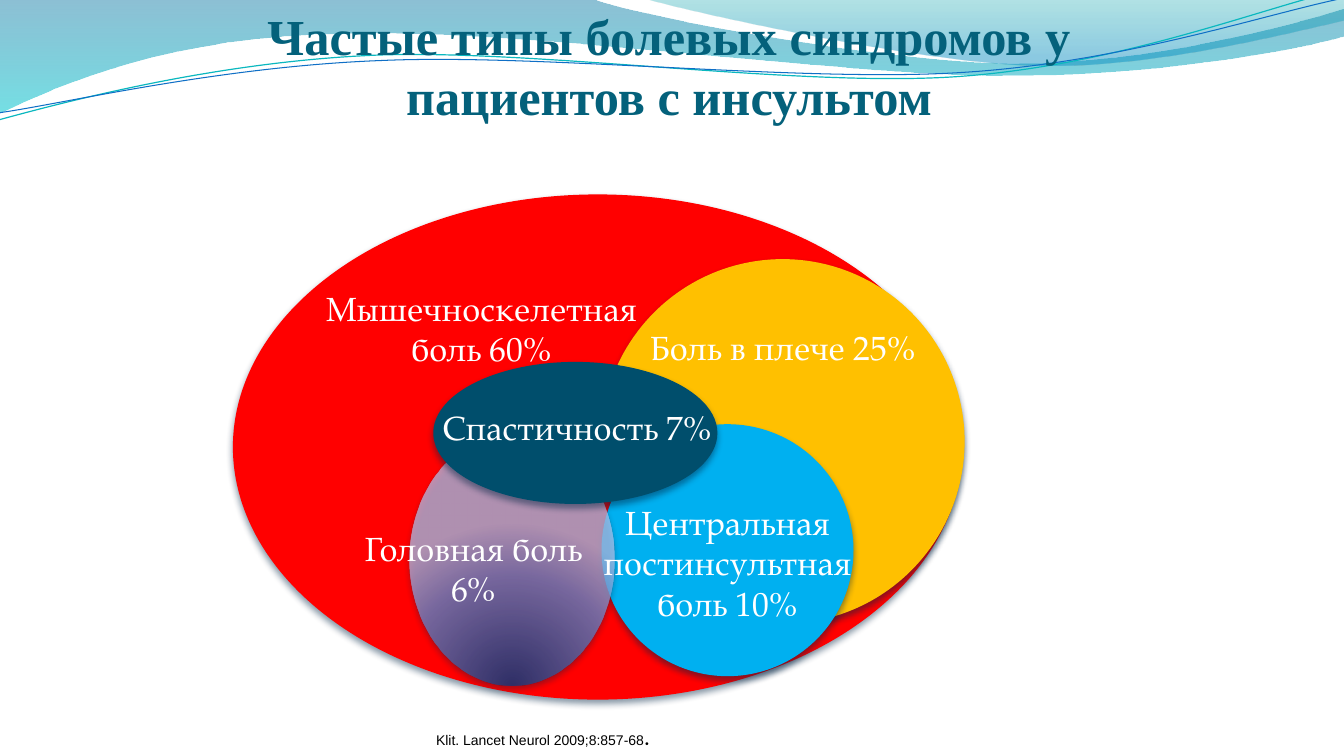
from lxml.etree import SubElement
from pptx import Presentation
from pptx.dml.color import RGBColor
from pptx.enum.shapes import MSO_SHAPE
from pptx.enum.text import MSO_ANCHOR, MSO_AUTO_SIZE, PP_ALIGN
from pptx.oxml import parse_xml
from pptx.oxml.ns import nsdecls, qn
from pptx.util import Cm, Pt

WHITE = RGBColor(0xFF, 0xFF, 0xFF)
BLACK = RGBColor(0x00, 0x00, 0x00)
TITLE_TEAL = RGBColor(0x04, 0x61, 0x7B)
CREST_CYAN = RGBColor(0x0A, 0xB8, 0xBF)
CREST_BLUE = RGBColor(0x0F, 0x6F, 0xC6)
RED = RGBColor(0xFF, 0x00, 0x00)
AMBER = RGBColor(0xFF, 0xC0, 0x00)
SKY = RGBColor(0x00, 0xB0, 0xF0)
PETROL = RGBColor(0x00, 0x4E, 0x6C)
SHADOW_NAVY = RGBColor(0x04, 0x25, 0x44)
NAVY = RGBColor(0x00, 0x3C, 0x85)
PERIWINKLE = RGBColor(0x66, 0x8C, 0xD3)
LAVENDER = RGBColor(0xB3, 0xC4, 0xED)
WAVE_BLUE = RGBColor(0x00, 0x74, 0xA1)
WAVE_CYAN = RGBColor(0x00, 0xC6, 0xCF)
WAVE_TEAL = RGBColor(0x00, 0xA1, 0xA9)
WAVE_AZURE = RGBColor(0x00, 0x8B, 0xBF)

LABEL_FONT = "TeX Gyre Pagella"
DOWNWARD = '<a:lin ang="5400000" scaled="0"/>'
FROM_BELOW = ('<a:path path="circle"><a:fillToRect l="50000" t="130000" '
              'r="50000" b="-30000"/></a:path>')


def fill_gradient(shape, stops, direction):
    shape.fill.background()
    stop_xml = "".join(
        f'<a:gs pos="{position * 1000}"><a:srgbClr val="{color}">'
        f'<a:alpha val="{alpha * 1000}"/></a:srgbClr></a:gs>'
        for position, color, alpha in stops)
    gradient = parse_xml(f'<a:gradFill {nsdecls("a")} rotWithShape="1">'
                         f'<a:gsLst>{stop_xml}</a:gsLst>{direction}</a:gradFill>')
    properties = shape.element.spPr
    properties.replace(properties.find(qn("a:noFill")), gradient)


def draw_curve(start, segments, closed):
    points = [start]
    for segment in segments:
        points += zip(segment[::2], segment[1::2])
    scaled = [(round(x * 100), round(y * 100)) for x, y in points]
    builder = slide.shapes.build_freeform(*scaled[0], scale=Cm(1) / 100)
    builder.add_line_segments(scaled[1:], close=closed)
    curve = builder.convert_to_shape()
    curve.shadow.inherit = False
    steps = iter(list(curve.element.spPr.iter(qn("a:lnTo"))))
    for segment in segments:
        first = next(steps)
        if len(segment) == 6:
            first.tag = qn("a:cubicBezTo")
            for later in (next(steps), next(steps)):
                first.append(later[0])
                later.getparent().remove(later)
    return curve


prs = Presentation()
prs.slide_width = Cm(33.87)
prs.slide_height = Cm(19.05)
slide = prs.slides.add_slide(prs.slide_layouts[5])

waves = [
    ((0, -0.03),
     [(14.91, -0.03), (16.1, 0.43, 22.48, 1.6, 25.68, 1.6),
      (28.91, 1.6, 32.46, 0.66, 33.86, 0.23), (33.91, 0.91),
      (33.3, 1.12, 29.46, 1.93, 25.25, 1.91),
      (21.06, 1.91, 12.93, 0.71, 8.71, 0.86),
      (4.37, 0.89, 1.55, 2.11, -0.03, 2.87)],
     [(0, WAVE_BLUE, 45), (100, WAVE_CYAN, 55)]),
    ((16.23, -0.03),
     [(17.25, 0.28, 23.09, 1.57, 26.04, 1.65),
      (28.98, 1.75, 32.56, 0.81, 33.86, 0.53), (33.86, 0)],
     [(0, WAVE_TEAL, 30), (80, WAVE_AZURE, 45)]),
]
for start, segments, stops in waves:
    wave = draw_curve(start, segments, True)
    fill_gradient(wave, stops, DOWNWARD)
    wave.line.fill.background()

crests = [
    ((-0.08, 2.22),
     [(1.59, 1.85, 5.37, 1.03, 9.38, 1.04),
      (13.4, 1.05, 20.03, 2.36, 24.1, 2.27),
      (28.17, 2.18, 31.84, 0.91, 33.87, 0.54)], CREST_CYAN, 0.85),
    ((-0.05, 2.04),
     [(1.56, 1.89, 5.54, 1.14, 9.61, 1.18),
      (13.65, 1.19, 20.19, 2.24, 24.23, 2.17),
      (28.31, 2.11, 31.92, 1.06, 33.93, 0.75)], CREST_BLUE, 0.75),
]
for start, segments, color, weight in crests:
    crest = draw_curve(start, segments, False)
    crest.rotation = 357.3
    crest.fill.background()
    crest.line.color.rgb = color
    crest.line.width = Pt(weight)

title = slide.shapes.title
title.element.getparent().append(title.element)
title.left, title.top, title.width, title.height = Cm(5.33), Cm(0), Cm(23.06), Cm(3.17)
heading = title.text_frame
heading.text = "Частые типы болевых синдромов у пациентов с инсультом"
heading.word_wrap = True
heading.auto_size = MSO_AUTO_SIZE.NONE
heading.vertical_anchor = MSO_ANCHOR.BOTTOM
heading.margin_left = heading.margin_right = heading.margin_bottom = Cm(0)
heading.margin_top = Cm(0.13)
heading_line = heading.paragraphs[0]
heading_line.alignment = PP_ALIGN.CENTER
heading_line.line_spacing = 1.0
heading_line.font.name = "Times New Roman"
heading_line.font.size = Pt(36)
heading_line.font.bold = True
heading_line.font.color.rgb = TITLE_TEAL

headache_stops = [(0, NAVY, 72), (68, PERIWINKLE, 72), (100, LAVENDER, 72)]
pain_areas = [
    (5.87, 4.9, 18.39, 12.73, RED),
    (15.14, 6.53, 9.17, 9.19, AMBER),
    (15.16, 10.69, 6.35, 6.35, SKY),
    (10.33, 10.92, 5.16, 6.35, None),
    (10.92, 9.12, 7.16, 3.58, PETROL),
]
for left, top, width, height, color in pain_areas:
    area = slide.shapes.add_shape(
        MSO_SHAPE.OVAL, Cm(left), Cm(top), Cm(width), Cm(height))
    if color is None:
        fill_gradient(area, headache_stops, FROM_BELOW)
    else:
        area.fill.solid()
        area.fill.fore_color.rgb = color
    area.line.fill.background()
    area.shadow.inherit = False
    shadow = SubElement(
        area.element.spPr.find(qn("a:effectLst")), qn("a:outerShdw"),
        blurRad=str(Pt(4.5)), dist=str(Pt(3)), dir="5400000", rotWithShape="0")
    shadow_color = SubElement(shadow, qn("a:srgbClr"), val=str(SHADOW_NAVY))
    SubElement(shadow_color, qn("a:alpha"), val="48000")

labels = [
    ("Мышечноскелетная боль 60%", 7.93, 7.12, 8.41, 2.31),
    ("Боль в плече 25%", 15.52, 8.11, 8.41, 1.3),
    ("Спастичность 7%", 10.34, 10.13, 8.41, 1.3),
    ("Головная боль 6%", 8.94, 13.18, 5.99, 2.31),
    ("Центральная постинсультная боль 10%", 14.13, 12.52, 8.41, 3.33),
]
for wording, left, top, width, height in labels:
    label = slide.shapes.add_textbox(
        Cm(left), Cm(top), Cm(width), Cm(height)).text_frame
    label.word_wrap = True
    label.auto_size = MSO_AUTO_SIZE.SHAPE_TO_FIT_TEXT
    label.text = wording
    label_line = label.paragraphs[0]
    label_line.alignment = PP_ALIGN.CENTER
    label_line.font.name = LABEL_FONT
    label_line.font.size = Pt(24)
    label_line.font.color.rgb = WHITE

citation = slide.shapes.add_textbox(
    Cm(10.74), Cm(18.03), Cm(16.1), Cm(1.02)).text_frame
citation.word_wrap = True
citation.auto_size = MSO_AUTO_SIZE.SHAPE_TO_FIT_TEXT
for wording, font_name, size in [
        ("Klit. Lancet Neurol 2009;8:857-68", "Arial", 10),
        (".", LABEL_FONT, 18)]:
    run = citation.paragraphs[0].add_run()
    run.text = wording
    run.font.name = font_name
    run.font.size = Pt(size)
    run.font.color.rgb = BLACK

prs.save("out.pptx")
